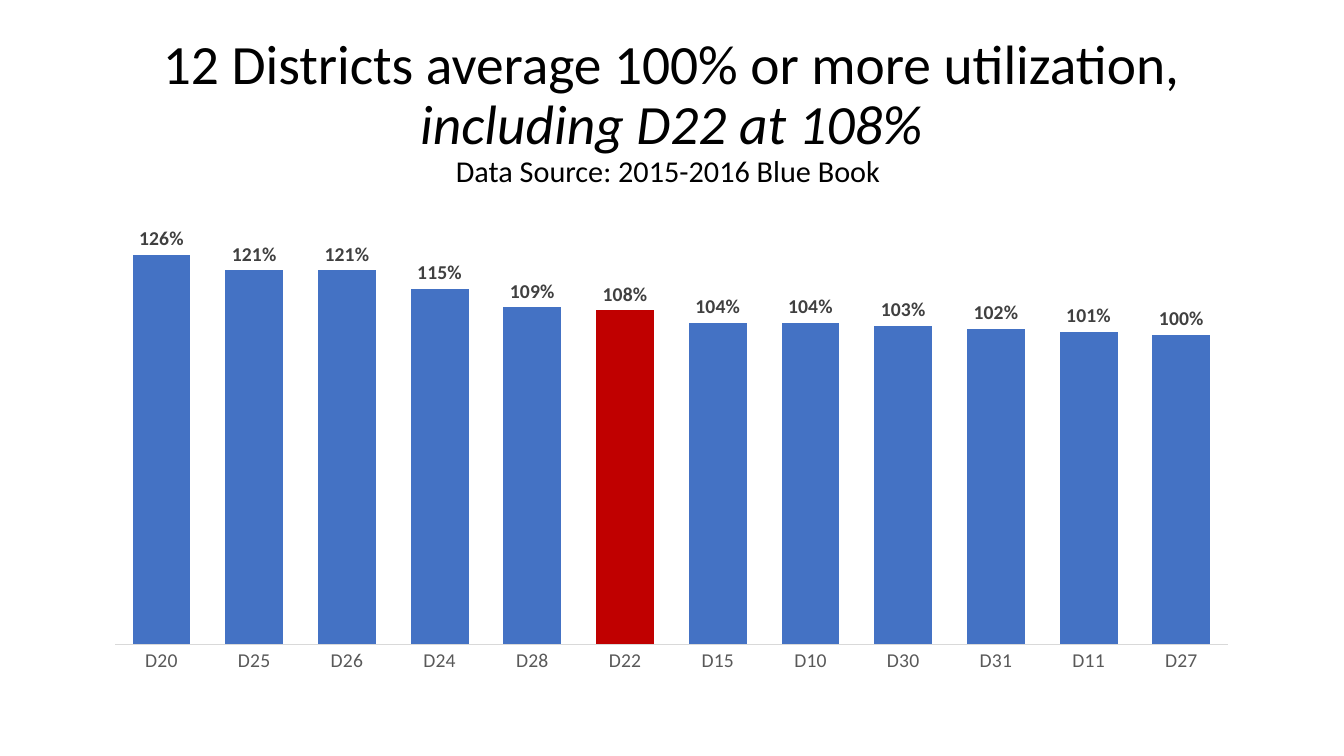
from pptx import Presentation
from pptx import util as u
from pptx.chart import data as chart_data
from pptx.dml.color import RGBColor
from pptx.enum import chart as charts, text

PX = 914400 / 100.8
FONT = "Calibri"
BLACK = RGBColor(0x00, 0x00, 0x00)
BLUE = RGBColor(0x44, 0x72, 0xC4)
RED = RGBColor(0xC0, 0x00, 0x00)
LABEL_GREY = RGBColor(0x40, 0x40, 0x40)
AXIS_GREY = RGBColor(0x59, 0x59, 0x59)
LINE_GREY = RGBColor(0xD9, 0xD9, 0xD9)

UTILIZATION = {
    "D20": 1.26, "D25": 1.21, "D26": 1.21, "D24": 1.15,
    "D28": 1.09, "D22": 1.08, "D15": 1.04, "D10": 1.04,
    "D30": 1.03, "D31": 1.02, "D11": 1.01, "D27": 1.00,
}
HIGHLIGHT = "D22"


def px(*lengths):
    return [u.Emu(round(length * PX)) for length in lengths]


def style(font, size, color, bold=False, italic=False):
    font.name = FONT
    font.size = u.Pt(size)
    font.color.rgb = color
    font.bold = bold
    font.italic = italic


deck = Presentation()
deck.slide_width, deck.slide_height = px(1344, 756)
page = deck.slides.add_slide(deck.slide_layouts[5])

# Title with its source line
title = page.shapes.title
title.left, title.top, title.width, title.height = px(92, 40, 1159, 146)
frame = title.text_frame
frame.word_wrap = True
frame.auto_size = text.MSO_AUTO_SIZE.NONE
frame.vertical_anchor = text.MSO_ANCHOR.MIDDLE
para = frame.paragraphs[0]
para.alignment = text.PP_ALIGN.CENTER
para.line_spacing = 0.9
for words, size, italic in (
    ("12 Districts average 100% or more utilization, ", 39.6, False),
    ("including D22 at 108%", 39.6, True),
    ("Data Source: 2015-2016 Blue Book ", 21.6, False),
):
    if words.startswith("Data Source"):
        para.add_line_break()
    span = para.add_run()
    span.text = words
    style(span.font, size, BLACK, italic=italic)

# Column chart of district utilization
data = chart_data.CategoryChartData(number_format="0%")
data.categories = list(UTILIZATION)
data.add_series("Series 1", list(UTILIZATION.values()))
chart = page.shapes.add_chart(
    charts.XL_CHART_TYPE.COLUMN_CLUSTERED, *px(92, 202, 1159, 480), data
).chart
chart.has_title = False
chart.has_legend = False
style(chart.font, 10, BLACK)

# Axes
districts = chart.category_axis
districts.major_tick_mark = charts.XL_TICK_MARK.NONE
districts.format.line.color.rgb = LINE_GREY
districts.format.line.width = u.Pt(0.75)
style(districts.tick_labels.font, 14, AXIS_GREY)
scale = chart.value_axis
scale.minimum_scale = 0
scale.maximum_scale = 1.4
scale.has_major_gridlines = False
scale.tick_labels.number_format = "0%"
scale.tick_labels.number_format_is_linked = False
scale.visible = False

# Columns, with one district highlighted
plot = chart.plots[0]
plot.gap_width = 60
plot.overlap = -27
plot.vary_by_categories = False
columns = plot.series[0]
columns.format.fill.solid()
columns.format.fill.fore_color.rgb = BLUE
highlight = columns.points[list(UTILIZATION).index(HIGHLIGHT)].format.fill
highlight.solid()
highlight.fore_color.rgb = RED

# Value labels
labels = columns.data_labels
labels.show_value = True
labels.number_format = "0%"
labels.number_format_is_linked = False
labels.position = charts.XL_LABEL_POSITION.OUTSIDE_END
style(labels.font, 14, LABEL_GREY, bold=True)

deck.save("out.pptx")
